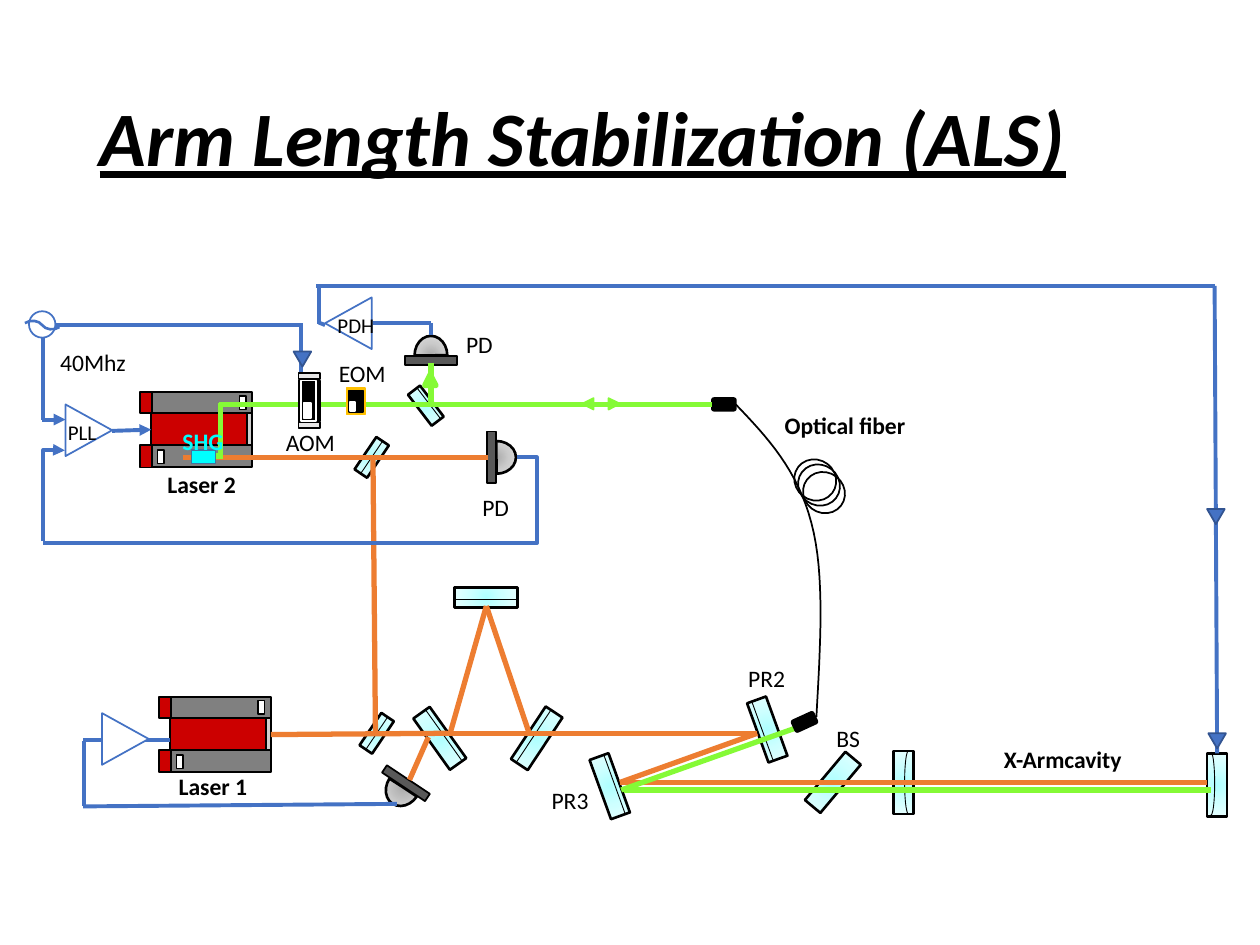
from math import cos, radians, sin

from lxml import etree
from pptx import Presentation
from pptx.dml.color import RGBColor
from pptx.enum.shapes import MSO_CONNECTOR, MSO_SHAPE
from pptx.enum.text import MSO_ANCHOR, MSO_AUTO_SIZE, PP_ALIGN
from pptx.oxml import parse_xml
from pptx.oxml.ns import nsdecls, qn
from pptx.util import Inches, Pt

RECT, ROUND, OVAL = MSO_SHAPE.RECTANGLE, MSO_SHAPE.ROUNDED_RECTANGLE, MSO_SHAPE.OVAL
PIE, ARC, TRIANGLE = MSO_SHAPE.PIE, MSO_SHAPE.ARC, MSO_SHAPE.ISOSCELES_TRIANGLE
EXTRACT = MSO_SHAPE.FLOWCHART_EXTRACT
STRAIGHT, ELBOW, CURVE = MSO_CONNECTOR.STRAIGHT, MSO_CONNECTOR.ELBOW, MSO_CONNECTOR.CURVE

THEME = {
    "font": "Calibri", "title": 44, "label": 13.5, "small": 12,
    "black": "000000", "white": "FFFFFF", "infrared": "ED7D31", "green": "85FA36",
    "signal": "4472C4", "marker": "325491", "red": "CC0000", "housing": "808080",
    "window": "D0CECE", "plate": "595959", "electrode": "E7E6E6", "gold": "FFC000",
    "cyan": "00FFFF", "crystal": "43739E",
    "glass": ("AFFFFF", "CEFFFF", "E7FFFF"), "dome": ("ABABAB", "CBCBCB", "E6E6E6"),
}

# ---- Content ----
TITLE = "Arm Length Stabilization (ALS)"
# text, left, top, width, wrap, size, bold, colour
LABELS = [
    ("PDH", 2.58, 2.43, 0.58, True, "small", False, "black"),
    ("40Mhz", 0.38, 2.71, 0.94, True, "label", False, "black"),
    ("AOM", 2.17, 3.35, 0.81, True, "label", False, "black"),
    ("EOM", 2.59, 2.8, 0.62, True, "label", False, "black"),
    ("PLL", 0.44, 3.28, 0.49, True, "small", False, "black"),
    ("Laser 1", 1.32, 6.08, 0.79, False, "label", True, "black"),
    ("PR2", 5.84, 5.22, 0.5, False, "label", False, "black"),
    ("PR3", 4.28, 6.19, 0.5, False, "label", False, "black"),
    ("BS", 6.54, 5.7, 0.39, False, "label", False, "black"),
    ("Optical fiber", 6.13, 3.21, 1.34, True, "label", True, "black"),
    ("X-Armcavity", 7.87, 5.86, 1.16, False, "label", True, "black"),
    ("PD", 3.6, 2.57, 0.42, False, "label", False, "black"),
    ("PD", 3.73, 3.86, 0.42, False, "label", False, "black"),
    ("SHG", 1.35, 3.34, 0.53, False, "label", True, "cyan"),
    ("Laser 2", 1.23, 3.68, 0.79, False, "label", True, "black"),
]
SMALL, LARGE = (0.12, 0.31), (0.16, 0.5)
# centre x, centre y, size, rotation, coating offset from the axis (None: no coating)
MIRRORS = [
    (3.38, 3.22, SMALL, 322.6, 0.03), (2.99, 5.82, SMALL, 34, 0),
    (2.95, 3.63, SMALL, 34, 0), (4.26, 5.86, LARGE, 33.5, -0.03),
    (3.49, 5.86, LARGE, 144.5, -0.04), (3.86, 4.74, LARGE, 270, -0.02),
    (6.09, 5.79, LARGE, 340.1, -0.04), (4.84, 6.24, LARGE, 340.1, 0.04),
    (6.61, 6.21, LARGE, 40, None), (7.17, 6.21, LARGE, 180, None),
    (9.66, 6.23, LARGE, 0, None),
]
CURVED_FACES = [(7.21, 6.21, 90), (9.61, 6.22, 270)]
LASERS = {"laser 1": (1.35, 5.53), "laser 2": (1.2, 3.11)}
LASER_PARTS = [  # offset from the housing, size, fill
    (0, 0, 0.8, 0.6, "housing"), (0.05, 0.46, 0.05, 0.11, "white"),
    (0.7, 0.03, 0.05, 0.11, "white"), (-0.09, 0, 0.1, 0.17, "red"),
    (-0.09, 0.42, 0.1, 0.18, "red"), (0, 0.17, 0.8, 0.25, "red"),
    (0.76, 0.17, 0.04, 0.25, "window"),
]
DETECTORS = [(3.94, 3.63, 270), (3.42, 2.82, 180), (3.2, 6.25, 33.6)]
MODULATORS = [  # left, top, width, height, fill, line
    (2.37, 3.02, 0.17, 0.32, "black", "black"), (2.37, 3.35, 0.17, 0.05, "electrode", "black"),
    (2.37, 2.96, 0.17, 0.05, "electrode", "black"), (2.39, 3.02, 0.12, 0.32, None, "white"),
    (2.41, 3.2, 0.06, 0.12, "white", "white"), (2.75, 3.08, 0.15, 0.21, "gold", "gold"),
    (2.77, 3.1, 0.11, 0.17, "black", "black"), (2.78, 3.19, 0.04, 0.07, "white", "white"),
]
INFRARED = [
    (2.98, 5.83, 2.96, 3.62), (1.45, 3.63, 3.87, 3.63), (3.57, 5.83, 3.86, 4.81),
    (4.2, 5.82, 3.86, 4.81), (4.92, 6.21, 6.01, 5.82), (3.55, 5.82, 4.2, 5.82),
    (4.2, 5.82, 6.01, 5.82), (4.92, 6.21, 9.58, 6.21), (3.25, 6.19, 3.4, 5.85),
]
GREEN = [
    (4.93, 6.27, 6.31, 5.78), (4.95, 6.27, 9.61, 6.27), (3.42, 2.88, 3.42, 3.21),
    (1.75, 3.2, 1.75, 3.63), (1.77, 3.62, 1.57, 3.62),
]
SIGNALS = [
    (0.34, 2.68, 0.34, 3.33), (2.53, 2.57, 2.53, 2.27), (0.44, 2.58, 2.39, 2.58),
    (3.42, 2.56, 2.96, 2.56), (3.42, 2.66, 3.42, 2.56), (2.51, 2.27, 9.64, 2.27),
    (9.64, 2.27, 9.66, 5.98), (3.15, 6.38, 0.66, 6.4), (0.67, 5.88, 0.67, 6.4),
    (1.35, 5.87, 0.66, 5.87), (2.39, 2.95, 2.39, 2.56), (2.58, 2.58, 2.53, 2.56),
]
AMPLIFIERS = [(0.5, 3.23, 90), (2.56, 2.38, 270), (0.79, 5.68, 90)]
MARKERS = [(9.59, 5.82), (9.58, 4.04), (2.33, 2.79)]
BEAM_HEADS = [(3.37, 2.97, 0, 3), (4.83, 3.16, 90, 1), (4.62, 3.16, 270, 1)]
COIL = [(6.37, 3.75), (6.33, 3.69), (6.3, 3.65)]
FIBER = [  # cubic curves: start, two control points, end
    ((5.84, 3.21), (6.09, 3.47), (6.33, 3.73), (6.44, 4.15)),
    ((6.44, 4.15), (6.55, 4.56), (6.51, 5.13), (6.48, 5.69)),
]

prs = Presentation()
prs.slide_width, prs.slide_height = Inches(10), Inches(7.5)
s = prs.slides.add_slide(prs.slide_layouts[5])


# ---- Helpers ----
def rgb(name):
    return RGBColor.from_string(THEME[name])


def shape(kind, x, y, w, h, fill=None, line="black", weight=1, rot=0):
    sp = s.shapes.add_shape(kind, Inches(x), Inches(y), Inches(w), Inches(h))
    sp.rotation = rot
    if fill is None:
        sp.fill.background()
    elif isinstance(THEME[fill], tuple):
        stops = "".join(f'<a:gs pos="{i * 50000}"><a:srgbClr val="{c}"/></a:gs>'
                        for i, c in enumerate(THEME[fill]))
        sp._element.spPr.insert(2, parse_xml(
            f'<a:gradFill {nsdecls("a")}><a:gsLst>{stops}</a:gsLst><a:path path="circle">'
            '<a:fillToRect l="50000" t="50000" r="50000" b="50000"/></a:path></a:gradFill>'))
    else:
        sp.fill.solid()
        sp.fill.fore_color.rgb = rgb(fill)
    sp.line.color.rgb, sp.line.width = rgb(line), Pt(weight)
    sp.shadow.inherit = False
    return sp


def centred(kind, cx, cy, w, h, *style, **options):
    return shape(kind, cx - w / 2, cy - h / 2, w, h, *style, **options)


def line(x1, y1, x2, y2, color, weight, kind=STRAIGHT, arrow=False, rot=0, bend=None):
    c = s.shapes.add_connector(kind, Inches(x1), Inches(y1), Inches(x2), Inches(y2))
    c.line.color.rgb, c.line.width = rgb(color), Pt(weight)
    spPr = c._element.spPr
    if arrow:
        etree.SubElement(spPr.find(qn("a:ln")), qn("a:tailEnd"), type="triangle")
    if rot:
        spPr.find(qn("a:xfrm")).set("rot", str(rot * 60000))
    if bend is not None:
        guides = spPr.find(qn("a:prstGeom")).find(qn("a:avLst"))
        etree.SubElement(guides, qn("a:gd"), name="adj1", fmla=f"val {bend}")
    etree.SubElement(spPr, qn("a:effectLst"))
    return c


def curve_points(curve, steps=16):
    for i in range(steps + 1):
        t = i / steps
        u = 1 - t
        yield tuple(Inches(u**3 * a + 3 * u**2 * t * b + 3 * u * t**2 * c + t**3 * d)
                    for a, b, c, d in zip(*curve))


# ---- Title ----
title = s.shapes.title
title.left, title.top, title.width, title.height = map(Inches, (0.69, 0.4, 8.62, 1.45))
tf = title.text_frame
tf.text, tf.vertical_anchor, tf.auto_size = TITLE, MSO_ANCHOR.MIDDLE, MSO_AUTO_SIZE.NONE
p = tf.paragraphs[0]
p.alignment, p.line_spacing = PP_ALIGN.LEFT, 0.9
p.font.name, p.font.size, p.font.color.rgb = THEME["font"], Pt(THEME["title"]), rgb("black")
p.font.bold = p.font.italic = p.font.underline = True

# ---- Mirrors ----
for cx, cy, (w, h), rot, coating in MIRRORS:
    centred(RECT, cx, cy, w, h, "glass", weight=1.5, rot=rot)
    if coating is not None:
        ca, sa = cos(radians(rot)), sin(radians(rot))
        mx, my, dx, dy = cx + coating * ca, cy + coating * sa, sa * h / 2, -ca * h / 2
        line(mx + dx, my + dy, mx - dx, my - dy, "black", 0.5)
for cx, cy, rot in CURVED_FACES:
    arc = centred(ARC, cx, cy, 0.5, 0.06, weight=0.5, rot=rot)
    arc.adjustments[0], arc.adjustments[1] = 107.71, 0
    arc._element.spPr.find(qn("a:xfrm")).set("flipV", "1")

# ---- Lasers, detectors and modulators ----
housings = {}
for name, (x, y) in LASERS.items():
    parts = [shape(RECT, x + dx, y + dy, w, h, fill) for dx, dy, w, h, fill in LASER_PARTS]
    housings[name] = parts[0]
for cx, cy, rot in DETECTORS:
    dome = centred(PIE, cx, cy, 0.26, 0.31, "dome", weight=1.5, rot=rot)
    dome.adjustments[0], dome.adjustments[1] = 0, 107.46
    back = 0.04
    centred(RECT, cx + back * sin(radians(rot)), cy - back * cos(radians(rot)),
            0.41, 0.07, "plate", rot=rot)

# ---- Beams and fiber ----
for beam in INFRARED:
    line(*beam, "infrared", 3)
line(2.15, 5.83, 3.55, 5.82, "infrared", 3).begin_connect(housings["laser 1"], 3)
for beam in GREEN:
    line(*beam, "green", 3)
coupler = shape(ROUND, 5.65, 3.16, 0.19, 0.1, "black")
line(1.74, 3.21, 5.65, 3.21, "green", 3).end_connect(coupler, 1)
shape(ROUND, 6.29, 5.68, 0.19, 0.1, "black", rot=335.4)
for x, y, rot, weight in BEAM_HEADS:
    shape(TRIANGLE, x, y, 0.09, 0.09, "green", "green", weight, rot)
for part in MODULATORS:
    shape(RECT, *part)
shape(RECT, 1.52, 3.57, 0.19, 0.11, "cyan", "crystal")
for x, y in COIL:
    shape(OVAL, x, y, 0.34, 0.32, rot=37.4)
points = [point for curve in FIBER for point in curve_points(curve)]
builder = s.shapes.build_freeform(*points[0])
builder.add_line_segments(points[1:], close=False)
fiber = builder.convert_to_shape()
fiber.fill.background()
fiber.line.color.rgb, fiber.line.width = rgb("black"), Pt(1)
fiber.shadow.inherit = False

# ---- Control signals ----
shape(OVAL, 0.23, 2.47, 0.21, 0.21, "white", "signal")
line(0.23, 2.49, 0.44, 2.67, "signal", 1.5, CURVE, rot=326)
line(4.1, 3.63, 0.34, 4.31, "signal", 2.25, ELBOW, bend=-4300)
line(0.79, 4.02, 0.07, 3.85, "signal", 2.25, ELBOW, arrow=True, rot=90, bend=100600)
for wire in SIGNALS:
    line(*wire, "signal", 2.25)
line(0.33, 3.33, 0.52, 3.33, "signal", 2.25, arrow=True)
line(0.89, 3.42, 1.2, 3.41, "signal", 2.25, arrow=True).end_connect(housings["laser 2"], 1)
for x, y, rot in AMPLIFIERS:
    shape(EXTRACT, x, y, 0.41, 0.37, "white", "signal", rot=rot)
for x, y in MARKERS:
    shape(EXTRACT, x, y, 0.14, 0.12, "signal", "marker", rot=180)

# ---- Labels ----
for text, x, y, w, wrap, size, bold, color in LABELS:
    height = 0.3 if size == "small" else 0.33
    tf = s.shapes.add_textbox(Inches(x), Inches(y), Inches(w), Inches(height)).text_frame
    tf.text, tf.word_wrap, tf.auto_size = text, wrap, MSO_AUTO_SIZE.SHAPE_TO_FIT_TEXT
    font = tf.paragraphs[0].font
    font.name, font.size, font.bold = THEME["font"], Pt(THEME[size]), bold
    font.color.rgb = rgb(color)

prs.save("out.pptx")
